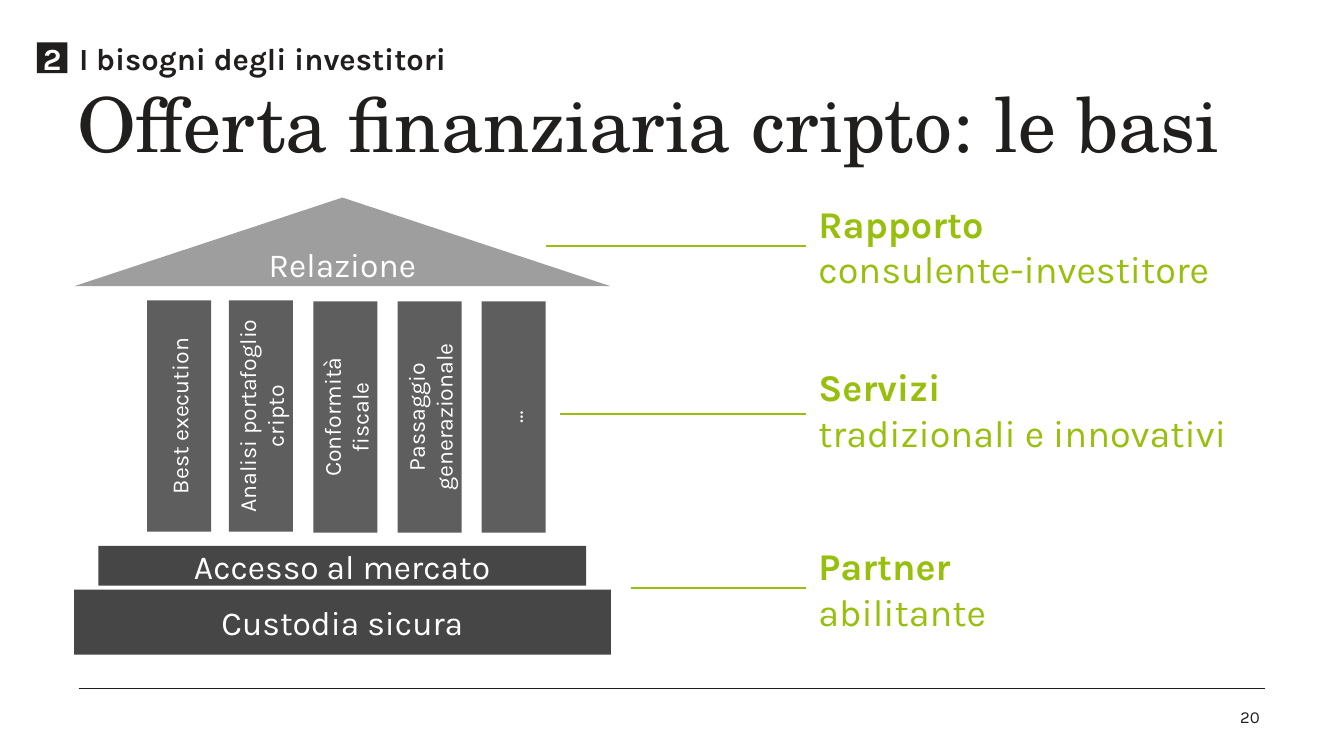
from lxml.etree import SubElement
from pptx import Presentation
from pptx.dml.color import RGBColor
from pptx.enum.shapes import MSO_CONNECTOR, MSO_SHAPE
from pptx.enum.text import MSO_ANCHOR, PP_ALIGN
from pptx.oxml.ns import qn
from pptx.util import Inches, Pt

COLORS = {"ink": "211F1E", "rule": "1F1D1C", "base": "464646", "pillar": "5E5E5E",
          "roof": "9E9E9E", "green": "98BF0D", "white": "FFFFFF"}

deck = Presentation()
deck.slide_width, deck.slide_height = Inches(26.67), Inches(15)
slide = deck.slides.add_slide(deck.slide_layouts[6])


def write(box, text, size, color, side=0.1, edge=0.05, font="Karla", bold=False,
          align=PP_ALIGN.LEFT, anchor=MSO_ANCHOR.MIDDLE):
    frame = box.text_frame
    frame.text = text
    frame.word_wrap = True
    frame.vertical_anchor = anchor
    frame.margin_left = frame.margin_right = Inches(side)
    frame.margin_top = frame.margin_bottom = Inches(edge)
    for line in frame.paragraphs:
        line.alignment = align
        for run in line.runs:
            run.font.name = font
            run.font.size = Pt(size)
            run.font.bold = bold
            run.font.color.rgb = RGBColor.from_string(COLORS[color])


def draw(x1, y1, x2, y2, color, width):
    line = slide.shapes.add_connector(
        MSO_CONNECTOR.STRAIGHT, Inches(x1), Inches(y1), Inches(x2), Inches(y2))
    line.line.color.rgb = RGBColor.from_string(COLORS[color])
    line.line.width = Pt(width)
    SubElement(line._element.spPr, qn("a:effectLst"))
    return line


draw(1.56, 13.66, 25.11, 13.66, "rule", 2)

title = slide.shapes.add_textbox(Inches(1.47), Inches(0.92), Inches(24.03), Inches(2.45))
write(title, "Offerta finanziaria cripto: le basi", 108, "ink", 0.06, 0.06,
      "TeX Gyre Schola", anchor=MSO_ANCHOR.BOTTOM)
title.text_frame.paragraphs[0].line_spacing = 0.8

page = slide.shapes.add_textbox(Inches(24.28), Inches(13.97), Inches(0.78), Inches(0.52))
write(page, "20", 24, "ink", 0.06, 0.06, align=PP_ALIGN.RIGHT, anchor=MSO_ANCHOR.BOTTOM)

topic = slide.shapes.add_textbox(Inches(1.47), Inches(0.71), Inches(22.13), Inches(0.87))
write(topic, "I bisogni degli investitori", 44, "ink", bold=True)

blocks = [
    ("Custodia sicura", MSO_SHAPE.RECTANGLE, 1.47, 11.7, 10.65, 1.29, "base", 48),
    ("Accesso al mercato", MSO_SHAPE.RECTANGLE, 1.95, 10.83, 9.68, 0.79, "base", 48),
    ("Relazione", MSO_SHAPE.ISOSCELES_TRIANGLE, 1.47, 3.92, 10.65, 1.76, "roof", 48),
    ("2", MSO_SHAPE.RECTANGLE, 0.73, 0.84, 0.61, 0.61, "ink", 44),
]
pillars = [("Best execution", 1.26, 7.62), ("Analisi portafoglio cripto", 2.88, 7.62),
           ("Conformità\nfiscale", 4.56, 7.64), ("Passaggio\ngenerazionale", 6.23, 7.64),
           ("…", 7.9, 7.64)]
for text, left, top in pillars:
    blocks.append((text, MSO_SHAPE.RECTANGLE, left, top, 4.59, 1.27, "pillar", 33))

for text, kind, left, top, width, height, color, size in blocks:
    block = slide.shapes.add_shape(
        kind, Inches(left), Inches(top), Inches(width), Inches(height))
    block.shadow.inherit = False
    block.fill.solid()
    block.fill.fore_color.rgb = RGBColor.from_string(COLORS[color])
    block.line.fill.background()
    upright = color == "pillar"
    block.rotation = 270 if upright else 0
    write(block, text, size, "white", side=0 if upright else 0.1,
          bold=color == "ink", align=PP_ALIGN.CENTER)

notes = [("Rapporto\nconsulente-investitore", 4.45, 9.19, 10.83, 4.88, True),
         ("Servizi\ntradizionali e innovativi", 7.69, 8.62, 11.12, 8.21, False),
         ("Partner\nabilitante", 11.24, 5.88, 12.53, 11.68, True)]
for text, top, width, end, level, joined in notes:
    label = slide.shapes.add_textbox(Inches(16), Inches(top), Inches(width), Inches(0.87))
    write(label, text, 54, "green")
    label.text_frame.margin_left = Inches(0.24)
    label.text_frame.paragraphs[0].runs[0].font.bold = True
    if joined:
        level = top + 0.87 / 2
    line = draw(16, level, end, level, "green", 3)
    if joined:
        line.begin_connect(label, 1)

deck.save("out.pptx")
